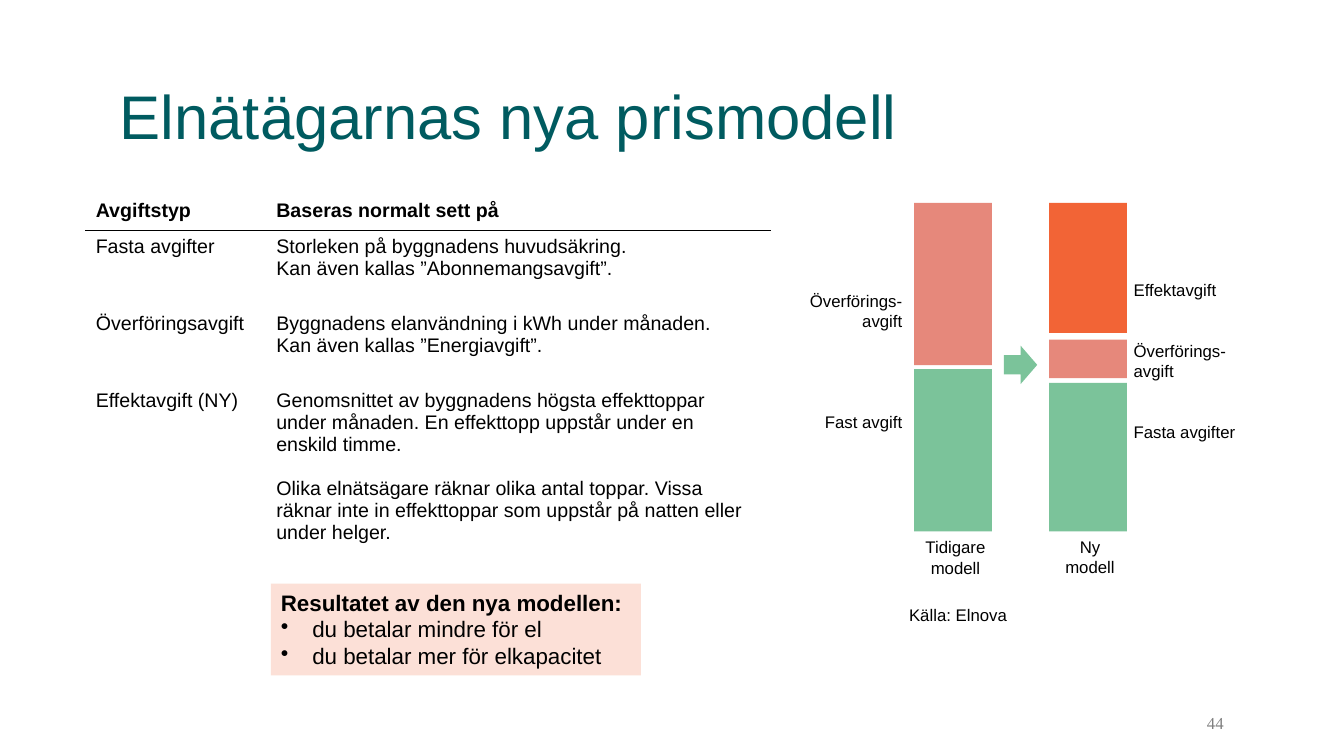
import pptx
import pptx.util
import pptx.dml.color
import pptx.enum.shapes
import pptx.enum.text
import pptx.oxml
import pptx.oxml.ns

Cm = pptx.util.Cm
Pt = pptx.util.Pt
RGB = pptx.dml.color.RGBColor.from_string
ALIGN = pptx.enum.text.PP_ALIGN
ANCHOR = pptx.enum.text.MSO_ANCHOR
SHAPE = pptx.enum.shapes.MSO_SHAPE

THEME = {
    "font": "Arial", "number_font": "Times New Roman",
    "title": "005B60", "text": "000000", "number": "808080", "paper": "FFFFFF",
    "fixed": "7BC39A", "transfer": "E6887B", "power": "F26436", "result": "FCE0D7",
    "title_size": 44, "result_size": 16, "table_size": 14, "label_size": 12,
}


def write(frame, text, size, color="text", align=ALIGN.LEFT, font="font"):
    frame.text = text
    frame.word_wrap = True
    for paragraph in frame.paragraphs:
        paragraph.alignment = align
        for run in paragraph.runs:
            run.font.name = THEME[font]
            run.font.size = Pt(THEME[size])
            run.font.color.rgb = RGB(THEME[color])


def block(kind, left, top, width, height, color):
    shape = slide.shapes.add_shape(kind, Cm(left), Cm(top), Cm(width), Cm(height))
    shape.shadow.inherit = False
    shape.fill.solid()
    shape.fill.fore_color.rgb = RGB(THEME[color])
    shape.line.fill.background()
    return shape


presentation = pptx.Presentation()
presentation.slide_width = Cm(33.87)
presentation.slide_height = Cm(19.05)
slide = presentation.slides.add_slide(presentation.slide_layouts[6])

title = slide.shapes.add_textbox(Cm(2.77), Cm(1.27), Cm(28.32), Cm(3.48)).text_frame
write(title, "Elnätägarnas nya prismodell", "title_size", "title")
title.vertical_anchor = ANCHOR.MIDDLE
title.paragraphs[0].line_spacing = 0.9

fees = [
    ("Avgiftstyp", "Baseras normalt sett på"),
    ("Fasta avgifter",
     "Storleken på byggnadens huvudsäkring.\nKan även kallas ”Abonnemangsavgift”."),
    ("Överföringsavgift",
     "Byggnadens elanvändning i kWh under månaden.\nKan även kallas ”Energiavgift”."),
    ("Effektavgift (NY)",
     "Genomsnittet av byggnadens högsta effekttoppar under månaden. "
     "En effekttopp uppstår under en enskild timme.\n"
     "Olika elnätsägare räknar olika antal toppar. Vissa räknar inte in "
     "effekttoppar som uppstår på natten eller under helger."),
]
fee_table = slide.shapes.add_table(4, 2, Cm(2.16), Cm(4.9), Cm(17.25), Cm(9.38)).table
fee_table.first_row = False
fee_table.horz_banding = False
for column, width in zip(fee_table.columns, (4.55, 12.7)):
    column.width = Cm(width)
for row, height in zip(fee_table.rows, (0.91, 1.94, 1.93, 4.6)):
    row.height = Cm(height)
for row_number, fee in enumerate(fees):
    for column_number, text in enumerate(fee):
        cell = fee_table.cell(row_number, column_number)
        cell.fill.solid()
        cell.fill.fore_color.rgb = RGB(THEME["paper"])
        write(cell.text_frame, text, "table_size")
        if row_number == 0:
            cell.text_frame.paragraphs[0].runs[0].font.bold = True
        if row_number < 2:
            side = ("lnB", "lnT")[row_number]
            border = pptx.oxml.parse_xml(
                f'<a:{side} {pptx.oxml.ns.nsdecls("a")} w="12700"><a:solidFill>'
                f'<a:srgbClr val="{THEME["text"]}"/></a:solidFill></a:{side}>')
            cell._tc.get_or_add_tcPr().insert(0, border)
fee_table.cell(3, 1).text_frame.paragraphs[1].space_before = Pt(16)

price_parts = [
    (23.04, 5.11, 4.09, "transfer"),
    (23.04, 9.3, 4.09, "fixed"),
    (26.44, 5.11, 3.28, "power"),
    (26.44, 8.56, 0.97, "transfer"),
    (26.44, 9.65, 3.74, "fixed"),
]
for left, top, height, color in price_parts:
    block(SHAPE.RECTANGLE, left, top, 1.96, height, color)
block(SHAPE.RIGHT_ARROW, 25.3, 8.71, 0.84, 0.97, "fixed")

labels = [
    ("Överförings-\navgift", 19.62, 7.19, 3.37, ALIGN.RIGHT),
    ("Fast avgift", 19.62, 10.26, 3.37, ALIGN.RIGHT),
    ("Effektavgift", 28.32, 6.93, 3.4, ALIGN.LEFT),
    ("Överförings-\navgift", 28.32, 8.46, 3.4, ALIGN.LEFT),
    ("Fasta avgifter", 28.32, 10.49, 3.4, ALIGN.LEFT),
    ("Tidigare\nmodell", 22.83, 13.41, 2.5, ALIGN.CENTER),
    ("Ny\nmodell", 26.22, 13.39, 2.5, ALIGN.CENTER),
    ("Källa: Elnova", 22.66, 15.11, 3.4, ALIGN.LEFT),
]
for text, left, top, width, align in labels:
    height = 0.25 + 0.51 * len(text.split("\n"))
    label = slide.shapes.add_textbox(Cm(left), Cm(top), Cm(width), Cm(height))
    write(label.text_frame, text, "label_size", align=align)

page_number = slide.shapes.add_textbox(Cm(23.47), Cm(17.7), Cm(7.62), Cm(1.02)).text_frame
write(page_number, "44", "label_size", "number", ALIGN.RIGHT, "number_font")
page_number.vertical_anchor = ANCHOR.MIDDLE

result = block(SHAPE.RECTANGLE, 6.83, 14.71, 9.32, 2.31, "result").text_frame
write(result, "Resultatet av den nya modellen:\ndu betalar mindre för el\n"
      "du betalar mer för elkapacitet", "result_size")
result.vertical_anchor = ANCHOR.TOP
result.paragraphs[0].runs[0].font.bold = True
for effect in result.paragraphs[1:]:
    properties = effect._p.get_or_add_pPr()
    properties.set("marL", str(Cm(0.79)))
    properties.set("indent", str(Cm(-0.79)))
    properties.append(pptx.oxml.parse_xml(
        f'<a:buChar {pptx.oxml.ns.nsdecls("a")} char="•"/>'))

presentation.save("out.pptx")
